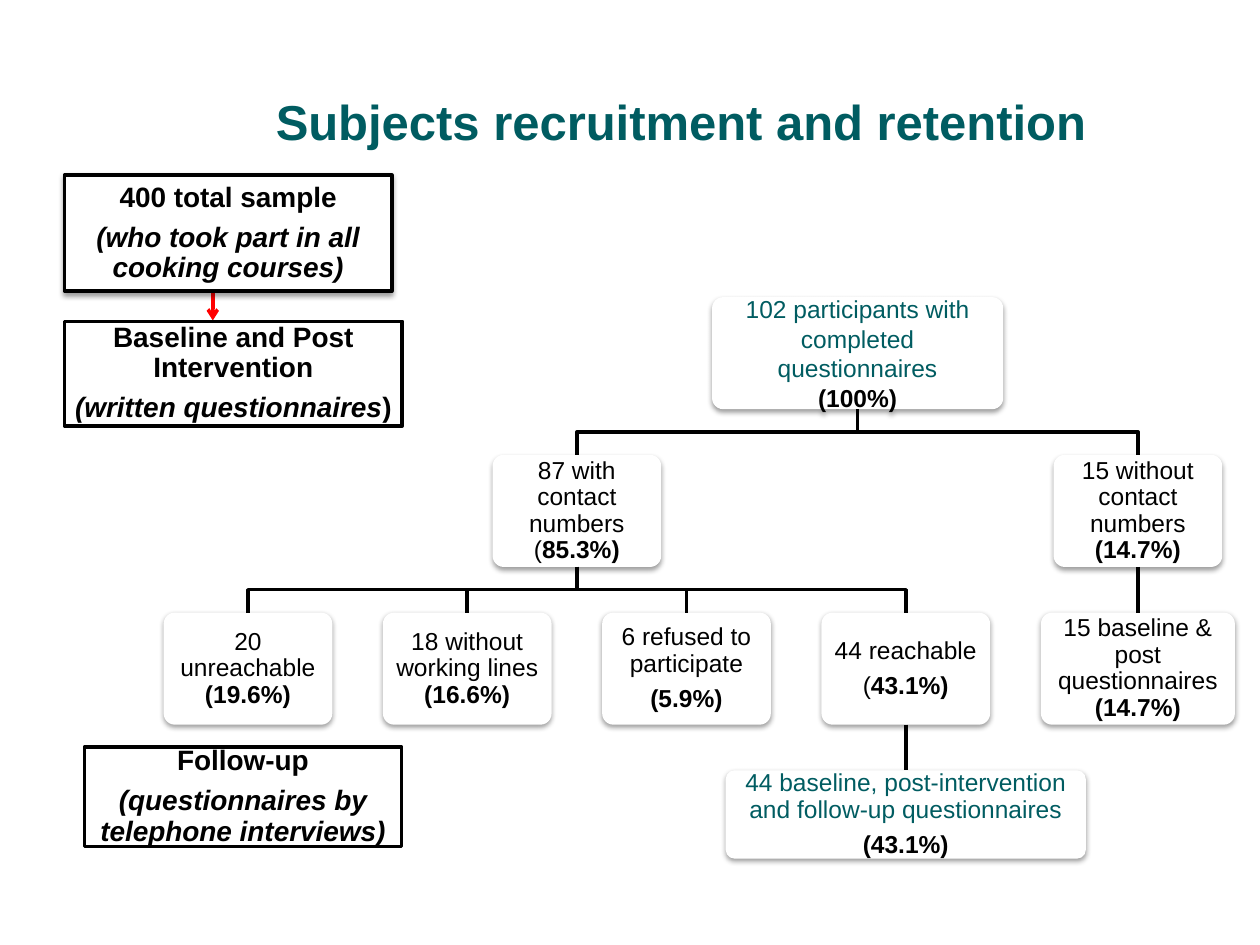
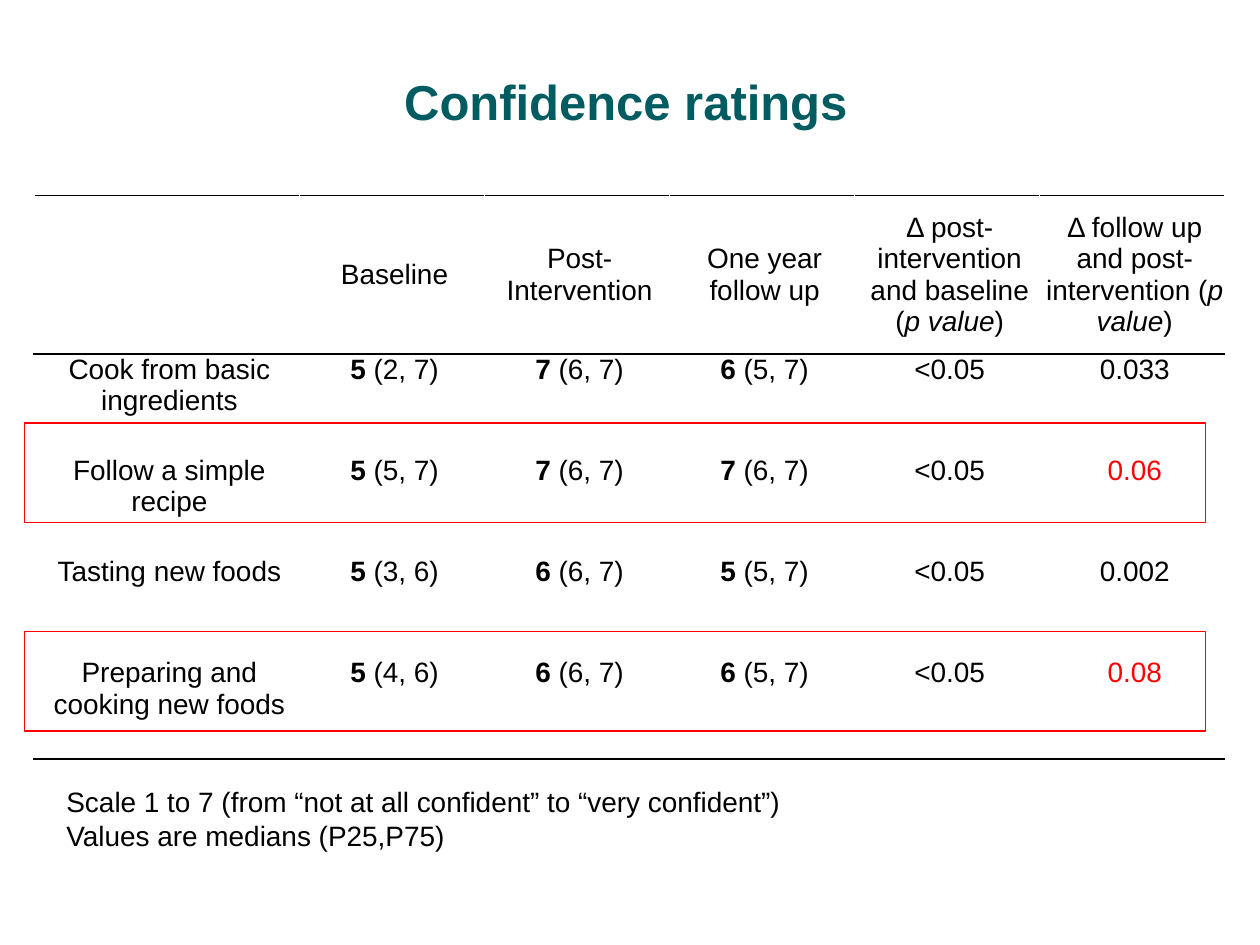
from lxml import etree
from pptx import Presentation
from pptx import util as u
from pptx.dml.color import RGBColor
from pptx.enum import shapes, text
from pptx.oxml import parse_xml
from pptx.oxml.ns import nsdecls, qn

FONT = "Arial"
BLACK, WHITE, TEAL, RED = "000000", "FFFFFF", "005C61", "FF0000"
SHADOW = (
    f'<a:effectLst {nsdecls("a")}><a:outerShdw blurRad="39370" dist="20320" dir="5400000" '
    f'rotWithShape="0"><a:srgbClr val="{BLACK}"><a:alpha val="38000"/></a:srgbClr>'
    "</a:outerShdw></a:effectLst>"
)


def color(value):
    return RGBColor.from_string(value)


def write(frame, paragraphs, size, inset=None, centred=True, tight=False):
    """Each paragraph is a list of (words, style); b bold, i italic, t teal, r red."""
    frame.word_wrap = True
    if inset is not None:
        frame.margin_left = frame.margin_right = u.Cm(inset)
        frame.margin_top = frame.margin_bottom = u.Cm(inset)
    for number, spans in enumerate(paragraphs):
        para = frame.add_paragraph() if number else frame.paragraphs[0]
        para.alignment = text.PP_ALIGN.CENTER if centred else text.PP_ALIGN.LEFT
        if tight:
            para.line_spacing = 0.9
            para.space_after = u.Pt(0.35 * size)
        for words, style in spans:
            span = para.add_run()
            span.text = words
            span.font.name = FONT
            span.font.size = u.Pt(size)
            span.font.bold = "b" in style
            span.font.italic = "i" in style
            tint = TEAL if "t" in style else RED if "r" in style else BLACK
            span.font.color.rgb = color(tint)


deck = Presentation()
deck.slide_width, deck.slide_height = u.Cm(25.4), u.Cm(19.05)

# Pages with their titles
titles = [
    ("Subjects recruitment and retention", 5.31, 1.73, 17.04, 1.45),
    ("Confidence ratings", 7.9, 1.32, 12.19, 3.18),
]
pages = []
for title, *place in titles:
    page = deck.slides.add_slide(deck.slide_layouts[6])
    box = page.shapes.add_textbox(*map(u.Cm, place))
    write(box.text_frame, [[(title, "bt")]], 28, centred=False)
    pages.append(page)
flow, ratings = pages

# Flow chart cards: centre, level, width, height, paragraphs
LEVEL_TOP, LEVEL_STEP = 5.99, 3.18
LEAF_LEFT, LEAF_STEP = 5.0, 4.42
contact_centre, no_contact_centre = 11.63, 22.94
leaves = {
    "unreachable": [[("20 unreachable ", ""), ("(19.6%)", "b")]],
    "no line": [[("18 without working lines ", ""), ("(16.6%)", "b")]],
    "refused": [[("6 refused to participate", "")], [("(5.9%)", "b")]],
    "reachable": [[("44 reachable", "")], [("(", ""), ("43.1%)", "b")]],
}
card_data = {
    "all": (17.29, 0, 5.87, 2.26,
            [[("102 participants with completed questionnaires", "t")], [("(100%)", "b")]]),
    "contact": (contact_centre, 1, 3.4, 2.26,
                [[("87 with contact numbers (", ""), ("85.3%)", "b")]]),
    "no contact": (no_contact_centre, 1, 3.4, 2.26,
                   [[("15 without contact numbers ", ""), ("(14.7%)", "b")]]),
    "two rounds": (no_contact_centre, 2, 3.91, 2.26,
                   [[("15 baseline & post questionnaires ", ""), ("(14.7%)", "b")]]),
    "three rounds": (LEAF_LEFT + 3 * LEAF_STEP, 3, 7.26, 1.78,
                     [[("44 baseline, post-intervention and follow-up questionnaires", "t")],
                      [("(43.1%)", "b")]]),
}
for number, (name, paragraphs) in enumerate(leaves.items()):
    card_data[name] = (LEAF_LEFT + number * LEAF_STEP, 2, 3.4, 2.26, paragraphs)

cards = {}
for name, (centre, level, width, height, paragraphs) in card_data.items():
    card = flow.shapes.add_shape(
        shapes.MSO_SHAPE.ROUNDED_RECTANGLE, u.Cm(centre - width / 2),
        u.Cm(LEVEL_TOP + level * LEVEL_STEP), u.Cm(width), u.Cm(height))
    card.adjustments[0] = 0.1
    card.fill.solid()
    card.fill.fore_color.rgb = color(WHITE)
    card.line.fill.background()
    card._element.spPr.append(parse_xml(SHADOW))
    card.text_frame.vertical_anchor = text.MSO_ANCHOR.MIDDLE
    write(card.text_frame, paragraphs, 14, inset=0.15, tight=name != "all")
    cards[name] = card

# Branches with a bend
branches = [("all", "contact"), ("all", "no contact")]
branches += [("contact", name) for name in leaves]
for parent_name, child_name in branches:
    parent, child = cards[parent_name], cards[child_name]
    start_x, start_y = parent.left + parent.width // 2, parent.top + parent.height
    end_x, end_y = child.left + child.width // 2, child.top
    middle_y = (start_y + end_y) // 2
    outline = flow.shapes.build_freeform(start_x, start_y)
    outline.add_line_segments(
        [(start_x, middle_y), (end_x, middle_y), (end_x, end_y)], close=False)
    branch = outline.convert_to_shape()
    branch.shadow.inherit = False
    branch.fill.background()
    branch.line.color.rgb = color(BLACK)
    branch.line.width = u.Pt(2)

# Straight links and the red arrow
straight = shapes.MSO_CONNECTOR.STRAIGHT
links = []
for parent_name, child_name in [("no contact", "two rounds"), ("reachable", "three rounds")]:
    link = flow.shapes.add_connector(straight, 0, 0, 0, 0)
    link.begin_connect(cards[parent_name], 2)
    link.end_connect(cards[child_name], 0)
    links.append((link, BLACK))
arrow = flow.shapes.add_connector(straight, u.Cm(4.29), u.Cm(5.85), u.Cm(4.29), u.Cm(6.46))
links.append((arrow, RED))
for link, tint in links:
    link.line.color.rgb = color(tint)
    link.line.width = u.Pt(2)
    etree.SubElement(link._element.spPr, qn("a:effectLst"))
etree.SubElement(arrow.line._get_or_add_ln(), qn("a:tailEnd"), type="arrow")

# Stage boxes on the left
stages = [
    (1.3, 3.53, 6.6, 2.34,
     [[("400 total sample", "b")], [("(who took part in all cooking courses)", "bi")]]),
    (1.3, 6.48, 6.81, 2.11,
     [[("Baseline and Post Intervention", "b")],
      [("(written questionnaires", "bi"), (")", "b")]]),
    (1.7, 15.06, 6.4, 2.01,
     [[("Follow-up", "b")], [("(questionnaires by telephone interviews)", "bi")]]),
]
for number, (*place, paragraphs) in enumerate(stages):
    stage = flow.shapes.add_shape(shapes.MSO_SHAPE.RECTANGLE, *map(u.Cm, place))
    stage.fill.solid()
    stage.fill.fore_color.rgb = color(WHITE)
    stage.line.color.rgb = color(BLACK)
    stage.line.width = u.Pt(2)
    if number == 0:
        stage._element.spPr.append(parse_xml(SHADOW))
    else:
        stage.shadow.inherit = False
    stage.text_frame.vertical_anchor = text.MSO_ANCHOR.MIDDLE
    write(stage.text_frame, paragraphs, 16, inset=0.03, tight=True)

# Ratings table: plain headings, then bold medians with quartiles and p values
grid = [[
    [], [("Baseline", "")], [("Post-Intervention", "")], [("One year follow up", "")],
    [("Δ post-intervention and baseline (", ""), ("p value", "i"), (")", "")],
    [("Δ follow up and post-intervention (", ""), ("p value", "i"), (")", "")],
]]
results = [
    ("Cook from basic ingredients", "5 (2, 7)", "7 (6, 7)", "6 (5, 7)", "<0.05", "0.033"),
    ("Follow a simple recipe", "5 (5, 7)", "7 (6, 7)", "7 (6, 7)", "<0.05", "0.06"),
    ("Tasting new foods", "5 (3, 6)", "6 (6, 7)", "5 (5, 7)", "<0.05", "0.002"),
    ("Preparing and cooking new foods", "5 (4, 6)", "6 (6, 7)", "6 (5, 7)", "<0.05", "0.08"),
]
for skill, *scores, first_p, second_p in results:
    row = [[(skill, "")]]
    for score in scores:
        median, quartiles = score.split(" ", 1)
        row.append([(median, "b"), (" " + quartiles, "")])
    row.append([(first_p, "")])
    row.append([(second_p, "r" if float(second_p) > 0.05 else "")])
    grid.append(row)

table = ratings.shapes.add_table(
    5, 6, u.Cm(0.69), u.Cm(3.94), u.Cm(24.0), u.Cm(11.36)).table
table.first_row = table.horz_banding = False
for number, column in enumerate(table.columns):
    column.width = u.Cm(3.73 if number else 5.35)
for number, row in enumerate(table.rows):
    row.height = u.Cm(2.04 if number else 3.2)
edges = {0: ("lnT", "lnB"), 1: ("lnT",), 4: ("lnB",)}
for row_number, row in enumerate(grid):
    for column_number, spans in enumerate(row):
        cell = table.cell(row_number, column_number)
        cell.margin_left = u.Cm(0.1)
        cell.margin_right = cell.margin_top = cell.margin_bottom = 0
        cell.vertical_anchor = text.MSO_ANCHOR.TOP if row_number else text.MSO_ANCHOR.MIDDLE
        for edge in edges.get(row_number, ()):
            cell._tc.get_or_add_tcPr().append(parse_xml(
                f'<a:{edge} {nsdecls("a")} w="12700"><a:solidFill>'
                f'<a:srgbClr val="{BLACK}"/></a:solidFill></a:{edge}>'))
        cell.fill.solid()
        cell.fill.fore_color.rgb = color(WHITE)
        write(cell.text_frame, [spans], 16)

# Notes under the table
notes = ratings.shapes.add_textbox(u.Cm(1.09), u.Cm(15.7), u.Cm(15.5), u.Cm(1.63))
write(notes.text_frame, [
    [("Scale 1 to 7 (from “not at all confident” to “very confident”)", "")],
    [("Values are medians (P25,P75)", "")],
], 16, centred=False)

# Red frames around the non-significant rows
for top in (8.53, 12.73):
    frame_box = ratings.shapes.add_shape(
        shapes.MSO_SHAPE.RECTANGLE, u.Cm(0.5), u.Cm(top), u.Cm(23.8), u.Cm(2.01))
    frame_box.shadow.inherit = False
    frame_box.fill.background()
    frame_box.line.color.rgb = color(RED)
    frame_box.line.width = u.Pt(0.75)

deck.save("out.pptx")
